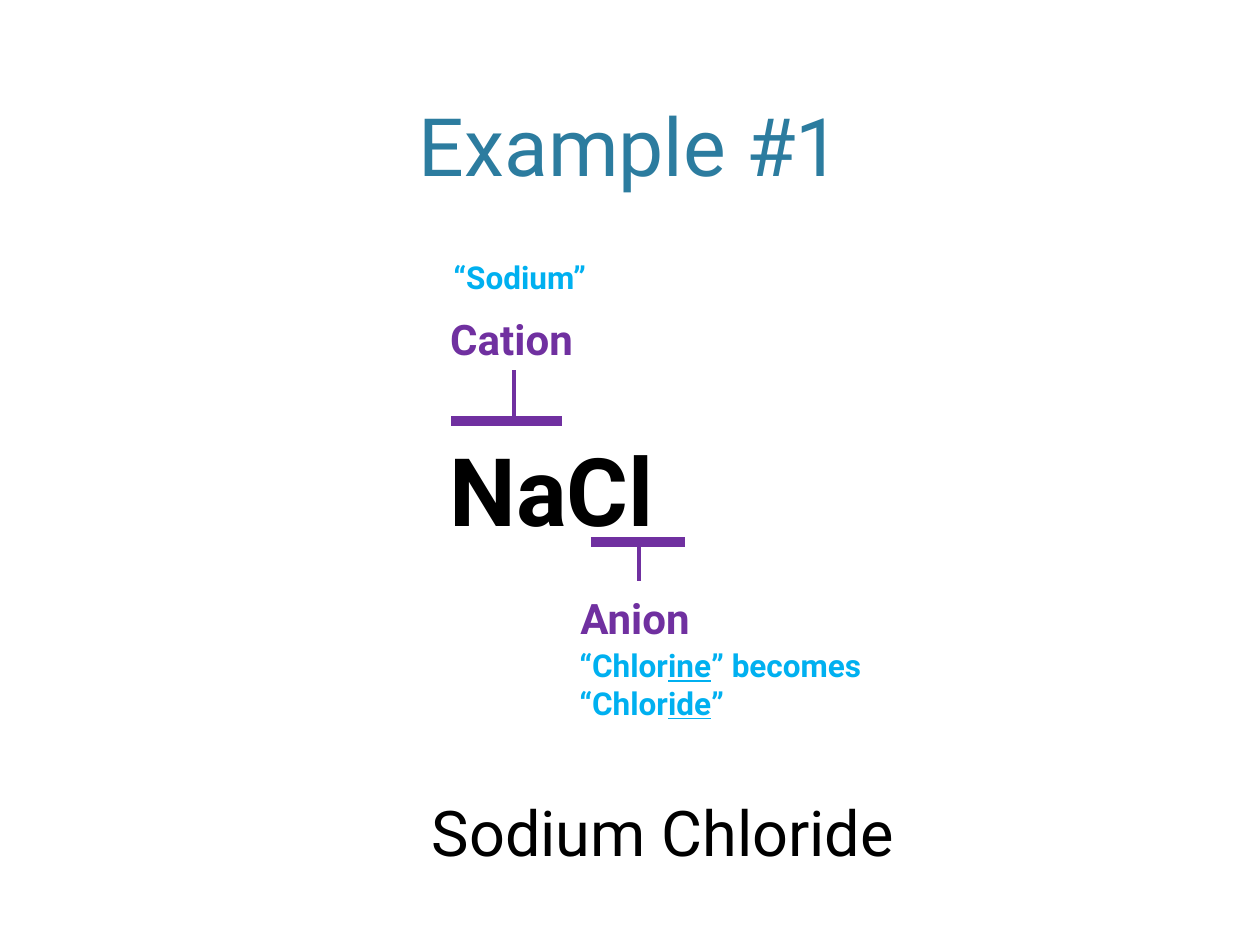
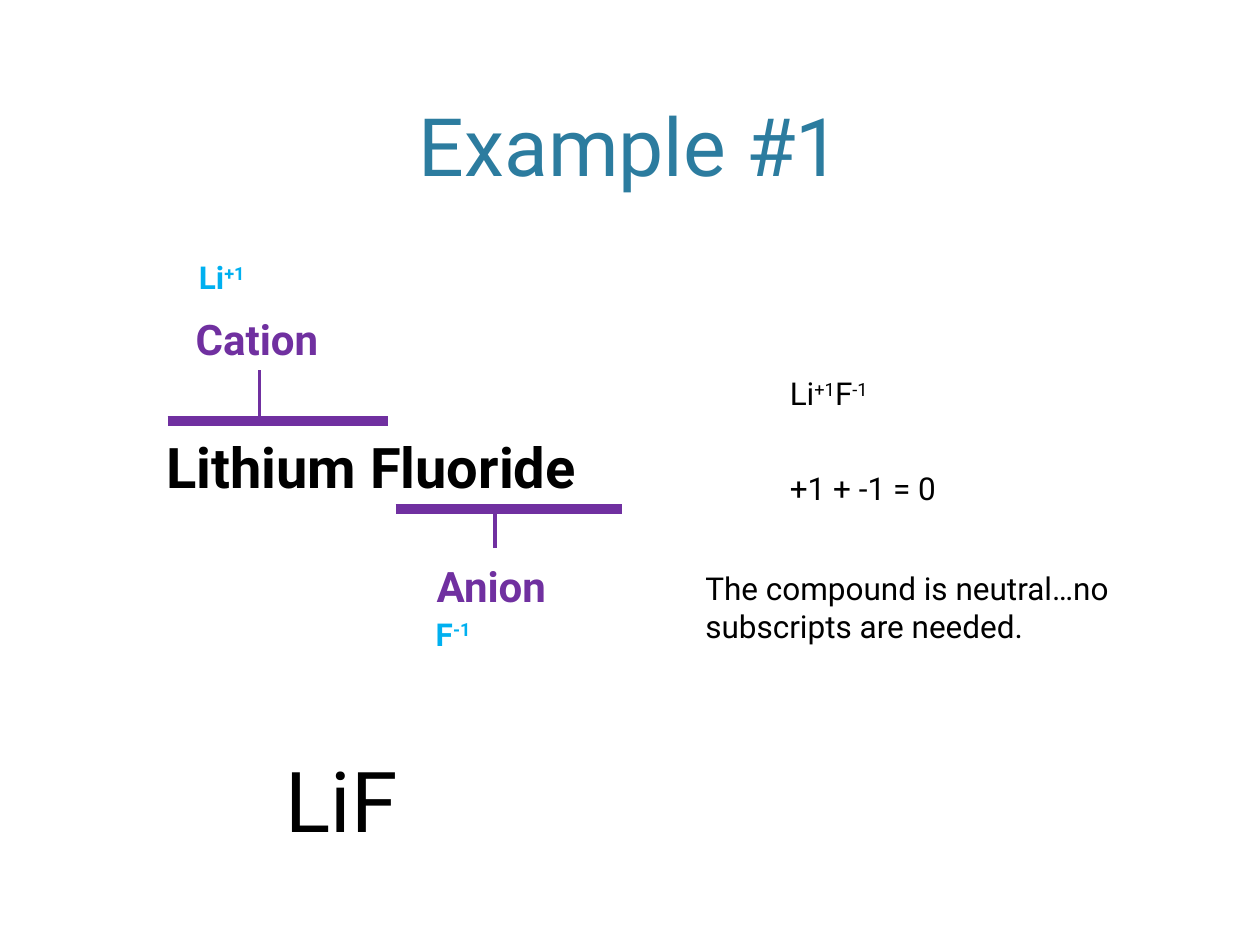
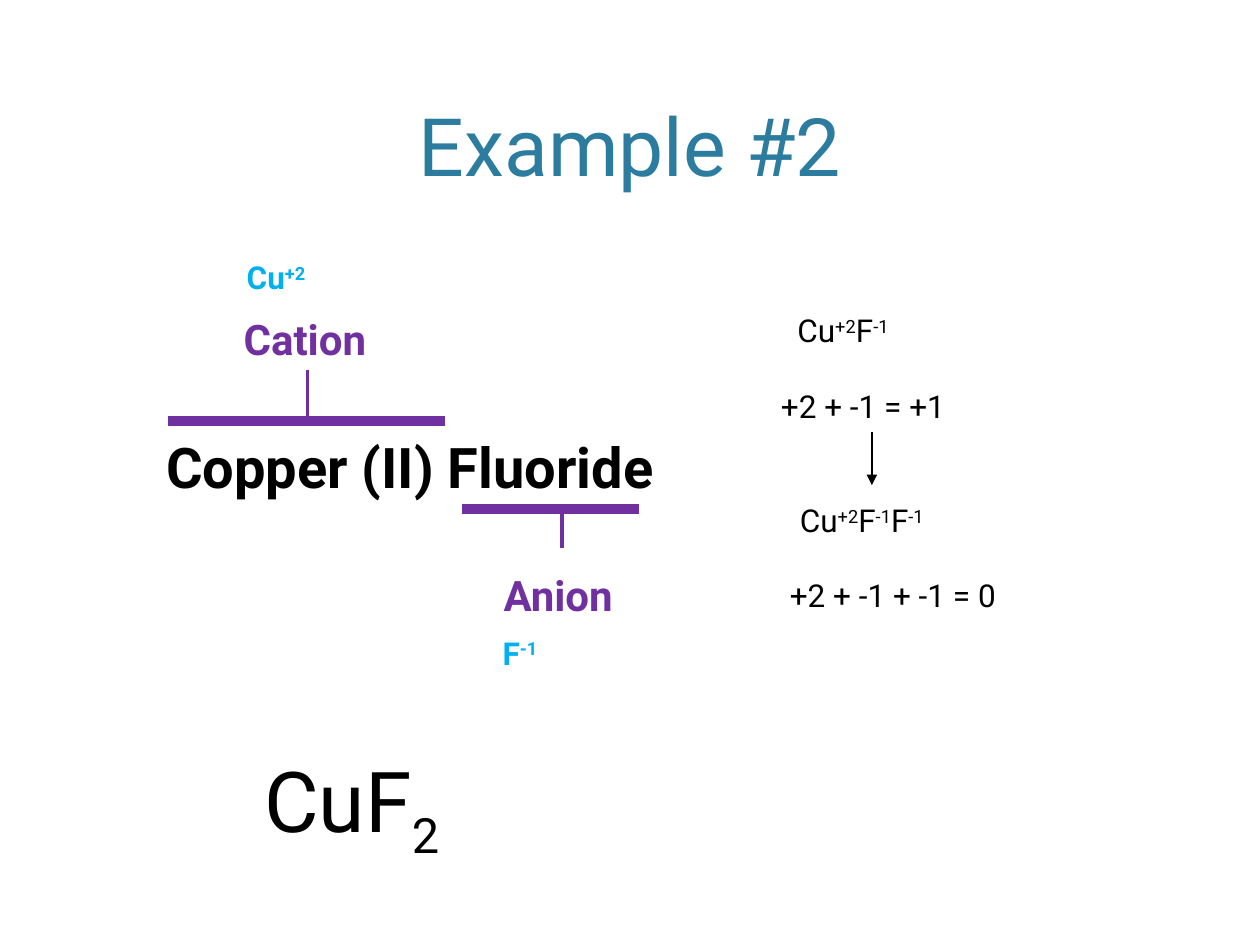
from pptx import Presentation
from pptx.dml.color import RGBColor
from pptx.enum.shapes import MSO_CONNECTOR
from pptx.enum.text import MSO_ANCHOR, MSO_AUTO_SIZE, PP_ALIGN
from pptx.oxml.ns import qn
from pptx.oxml.xmlchemy import OxmlElement
from pptx.util import Pt

PX = 9144  # EMU per px, 100 px to the inch
BLANK_LAYOUT = 6
STRAIGHT = MSO_CONNECTOR.STRAIGHT
LEFT, CENTER = PP_ALIGN.LEFT, PP_ALIGN.CENTER
TOP, BOTTOM = MSO_ANCHOR.TOP, MSO_ANCHOR.BOTTOM
FIXED, GROW = MSO_AUTO_SIZE.NONE, MSO_AUTO_SIZE.SHAPE_TO_FIT_TEXT

FONT = "Roboto"
COLORS = {
    "title": "2C7C9F",
    "ion": "7030A0",
    "note": "00B0F0",
    "text": "000000",
}
BASELINES = {"sup": "30000", "sub": "-25000"}

CATION_BAR_Y = 334
BAR_WEIGHT, STEM_WEIGHT = 6, 2


def sup(text):
    return text, "sup"


def sub(text):
    return text, "sub"


def underlined(text):
    return text, "underline"


class Deck:
    def __init__(self):
        self.presentation = Presentation()
        self.presentation.slide_width = 1000 * PX
        self.presentation.slide_height = 750 * PX
        self.slide = None

    def start_slide(self, title):
        layout = self.presentation.slide_layouts[BLANK_LAYOUT]
        self.slide = self.presentation.slides.add_slide(layout)
        self.text(title, 60, 12, 880, 146, size=46, color="title",
                  align=CENTER, anchor=BOTTOM, fit=FIXED)

    def text(self, content, left, top, width, height=40, *, size=18,
             color="text", bold=False, align=LEFT, anchor=TOP, wrap=True,
             fit=GROW):
        """Add text given as a string or as a list of strings and (text, style) pairs."""
        box = self.slide.shapes.add_textbox(
            left * PX, top * PX, width * PX, height * PX)
        frame = box.text_frame
        frame.word_wrap = wrap
        frame.auto_size = fit
        frame.vertical_anchor = anchor
        paragraph = frame.paragraphs[0]
        paragraph.alignment = align
        for part in [content] if isinstance(content, str) else content:
            words, style = (part, None) if isinstance(part, str) else part
            run = paragraph.add_run()
            run.text = words
            run.font.name = FONT
            run.font.size = Pt(size)
            run.font.bold = bold
            run.font.color.rgb = RGBColor.from_string(COLORS[color])
            if style == "underline":
                run.font.underline = True
            elif style:
                run.font._element.set("baseline", BASELINES[style])

    def line(self, x1, y1, x2, y2, *, weight, color="ion", arrow=False):
        connector = self.slide.shapes.add_connector(
            STRAIGHT, x1 * PX, y1 * PX, x2 * PX, y2 * PX)
        connector.line.color.rgb = RGBColor.from_string(COLORS[color])
        connector.line.width = Pt(weight)
        properties = connector._element.spPr
        properties.append(OxmlElement("a:effectLst"))
        if arrow:
            head = OxmlElement("a:tailEnd")
            head.set("type", "triangle")
            properties.find(qn("a:ln")).append(head)

    def ion_label(self, name, left, top, width):
        self.text(name, left, top, width, 50, size=24, color="ion",
                  bold=True, align=CENTER, wrap=False)

    def note(self, content, left, top, width=205, height=40):
        self.text(content, left, top, width, height, color="note", bold=True)

    def cation(self, note, bar_left, bar_right, stem):
        """Mark the cation above the compound, with its label and note on top."""
        y = CATION_BAR_Y
        self.line(bar_left, y, bar_right, y, weight=BAR_WEIGHT)
        self.line(stem, y - 4, stem, y - 40, weight=STEM_WEIGHT)
        self.ion_label("Cation", stem - 64, y - 90, 124)
        self.note(note, stem - 58, y - 134)

    def anion(self, note, bar_left, bar_right, stem, y, label_gap=36,
              note_gap=43, **note_size):
        """Mark the anion below the compound, with its label and note underneath."""
        label_top = y + label_gap
        self.line(bar_left, y, bar_right, y, weight=BAR_WEIGHT)
        self.line(stem, y + 31, stem, y - 3, weight=STEM_WEIGHT)
        self.ion_label("Anion", stem - 60, label_top, 114)
        self.note(note, stem - 57, label_top + note_gap, **note_size)

    def compound(self, name, left, width, height=64, size=32):
        self.text(name, left, 338, width, height, size=size, bold=True,
                  wrap=False)

    def answer(self, content, left, top, width, height=91, size=48):
        self.text(content, left, top, width, height, size=size, wrap=False)


def sodium_chloride(deck):
    deck.start_slide("Example #1")
    deck.compound("NaCl", 347, 191, height=100, size=54)
    deck.cation("“Sodium”", 358, 446, stem=408)
    deck.anion(["“Chlor", underlined("ine"), "” becomes “Chlor",
                underlined("ide"), "”"],
               469, 544, stem=507, y=430, label_gap=35, width=283, height=70)
    deck.answer("Sodium Chloride", 333, 625, 390, height=70, size=36)


def lithium_fluoride(deck):
    deck.start_slide("Example #1")
    deck.compound("Lithium Fluoride", 122, 381)
    deck.cation(["Li", sup("+1")], 133, 308, stem=206)
    deck.anion(["F", sup("-1")], 314, 494, stem=393, y=404)
    deck.answer("LiF", 217, 589, 116)
    deck.text(["Li", sup("+1"), "F", sup("-1")], 617, 292, 94, wrap=False)
    deck.text("+1 + -1 = 0", 617, 367, 142, wrap=False)
    deck.text("The compound is neutral…no subscripts are needed.",
              550, 447, 410, 70)


def copper_fluoride(deck):
    copper, fluorine = ["Cu", sup("+2")], ["F", sup("-1")]
    deck.start_slide("Example #2")
    deck.compound("Copper (II) Fluoride", 122, 450)
    deck.cation(copper, 133, 353, stem=244)
    deck.anion(fluorine, 367, 507, stem=446, y=404, label_gap=43, note_gap=51)
    deck.answer(["CuF", sub("2")], 200, 589, 172)
    deck.text(copper + fluorine, 623, 242, 169)
    deck.text("+2 + -1 = +1", 610, 302, 174, wrap=False)
    deck.line(692, 343, 692, 385, weight=1, color="text", arrow=True)
    deck.text(copper + fluorine * 2, 625, 393, 176)
    deck.text("+2 + -1 + -1 = 0", 617, 452, 192, wrap=False)


def main():
    deck = Deck()
    for build_example in (sodium_chloride, lithium_fluoride, copper_fluoride):
        build_example(deck)
    deck.presentation.save("out.pptx")


if __name__ == "__main__":
    main()
